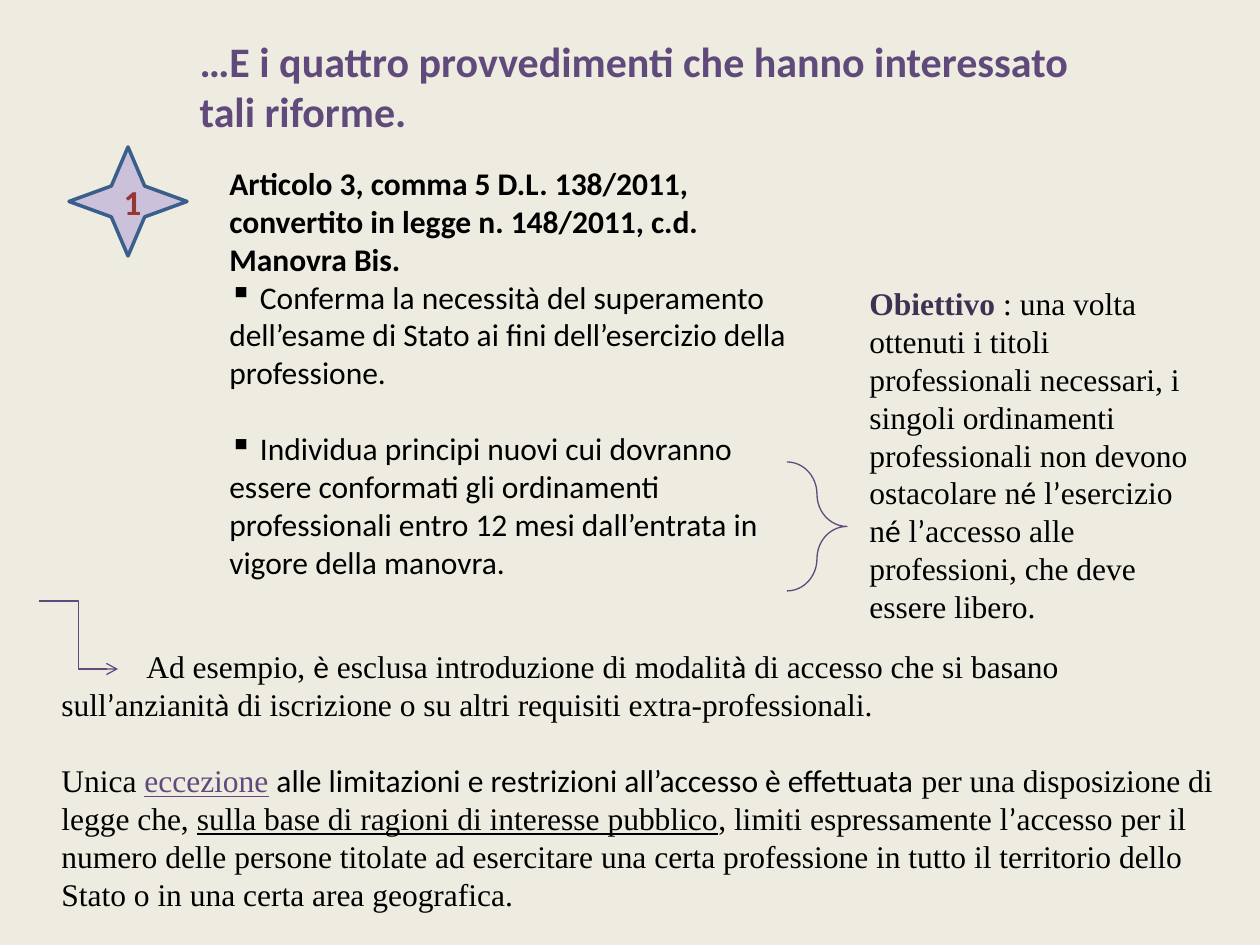
from itertools import groupby

from lxml.etree import SubElement
from pptx import Presentation
from pptx.dml.color import RGBColor
from pptx.enum.shapes import MSO_CONNECTOR, MSO_SHAPE
from pptx.enum.text import MSO_ANCHOR as Anchor, PP_ALIGN as Align
from pptx.oxml.ns import qn
from pptx.util import Pt

PX = 914400 / 126
SANS, SERIF = "Calibri", "Times New Roman"
ACCENTED = "éèà’"  # set in the sans font inside serif text

BACKGROUND = RGBColor(0xEE, 0xEC, 0xE1)
BLACK = RGBColor(0, 0, 0)
PURPLE = RGBColor(0x60, 0x4A, 0x7B)
DARK_PURPLE = RGBColor(0x40, 0x31, 0x52)
LILAC = RGBColor(0xCC, 0xC1, 0xDA)
BLUE = RGBColor(0x3A, 0x5F, 0x8C)
RED = RGBColor(0x95, 0x37, 0x35)

# Content: each paragraph is a list of (text, format) runs
TITLE = [[("…E i quattro provvedimenti che hanno interessato tali riforme.", {})]]
ARTICLE = [
    [("Articolo 3, comma 5 D.L. 138/2011, convertito in legge n. 148/2011, "
      "c.d. Manovra Bis.", {"bold": True})],
    [(" Conferma la necessità del superamento dell’esame di Stato ai fini "
      "dell’esercizio della professione.", {})],
    [(" Individua principi nuovi cui dovranno essere conformati gli ordinamenti "
      "professionali entro 12 mesi dall’entrata in vigore della manovra.", {})],
]
GOAL = [[
    ("Obiettivo ", {"color": DARK_PURPLE, "bold": True}),
    (": una volta ottenuti i titoli professionali necessari, i singoli "
     "ordinamenti professionali non devono ostacolare né l’esercizio né "
     "l’accesso alle professioni, che deve essere libero.", {}),
]]
EXAMPLE = [
    [("Ad esempio, è esclusa introduzione di modalità di accesso che si basano "
      "sull’anzianità di iscrizione o su altri requisiti extra-professionali.", {})],
    [("Unica ", {}),
     ("eccezione", {"color": PURPLE, "underline": True}),
     (" ", {}),
     ("alle limitazioni e restrizioni all’accesso è effettuata", {"font": SANS}),
     (" per una disposizione di legge che, ", {}),
     ("sulla base di ragioni di interesse pubblico", {"underline": True}),
     (", limiti espressamente l’accesso per il numero delle persone titolate ad "
      "esercitare una certa professione in tutto il territorio dello Stato o in "
      "una certa area geografica.", {})],
]


def px(*lengths):
    return [round(length * PX) for length in lengths]


def add_run(paragraph, text, font=SANS, size=18, color=BLACK, bold=False,
            underline=False):
    pieces = [(False, text)]
    if font == SERIF:
        pieces = [(accented, "".join(letters)) for accented, letters
                  in groupby(text, lambda letter: letter in ACCENTED)]
    for accented, piece in pieces:
        run = paragraph.add_run()
        run.text = piece
        run.font.name = SANS if accented else font
        run.font.size = Pt(size)
        run.font.color.rgb = color
        run.font.bold = bold
        run.font.underline = underline


def write(shape, paragraphs, anchor=Anchor.TOP, align=Align.LEFT, **base):
    frame = shape.text_frame
    frame.word_wrap = True
    frame.vertical_anchor = anchor
    for index, runs in enumerate(paragraphs):
        paragraph = frame.add_paragraph() if index else frame.paragraphs[0]
        paragraph.alignment = align
        for text, changes in runs:
            add_run(paragraph, text, **{**base, **changes})
    return frame.paragraphs


def outline(shape, color, width):
    shape.line.color.rgb = color
    shape.line.width = Pt(width)


prs = Presentation()
prs.slide_width, prs.slide_height = px(1260, 945)
slide = prs.slides.add_slide(prs.slide_layouts[5])
slide.background.fill.solid()
slide.background.fill.fore_color.rgb = BACKGROUND
shapes = slide.shapes

# Title
title = shapes.title
title.left, title.top, title.width, title.height = px(187, 29, 955, 115)
write(title, TITLE, size=24, color=PURPLE, bold=True)

# Article with its two bulleted points
article = shapes.add_textbox(*px(217, 158, 591, 432))
_, *points = write(article, ARTICLE)
for point in points:
    SubElement(point._p.get_or_add_pPr(), qn("a:buChar"), char="▪")
points[-1].space_before = Pt(22)

# Numbered star
star = shapes.add_shape(MSO_SHAPE.STAR_4_POINT, *px(69, 147, 118, 109))
star.shadow.inherit = False
star.adjustments[0] = 0.2
star.fill.solid()
star.fill.fore_color.rgb = LILAC
outline(star, BLUE, 2)
write(star, [[("1", {})]], anchor=Anchor.MIDDLE, align=Align.CENTER,
      size=20, color=RED, bold=True)

# Brace leading to the goal
brace = shapes.add_shape(MSO_SHAPE.RIGHT_BRACE, *px(787, 462, 60, 129))
brace.shadow.inherit = False
brace.adjustments[0] = 0.54
brace.fill.background()
outline(brace, PURPLE, 0.75)
goal = shapes.add_textbox(*px(857, 276, 344, 357))
write(goal, GOAL, anchor=Anchor.MIDDLE, font=SERIF)

# Example and exception
example = shapes.add_textbox(*px(49, 640, 1182, 280))
first, exception = write(example, EXAMPLE, anchor=Anchor.MIDDLE, font=SERIF)
first._p.get_or_add_pPr().set("indent", str(px(85)[0]))
exception.space_before = Pt(22)

# Elbow arrow to the example
arrow = shapes.add_connector(MSO_CONNECTOR.ELBOW, *px(39, 601, 118, 669))
outline(arrow, PURPLE, 0.75)
SubElement(arrow.line._get_or_add_ln(), qn("a:tailEnd"), type="arrow")
SubElement(arrow._element.spPr, qn("a:effectLst"))

prs.save("out.pptx")
